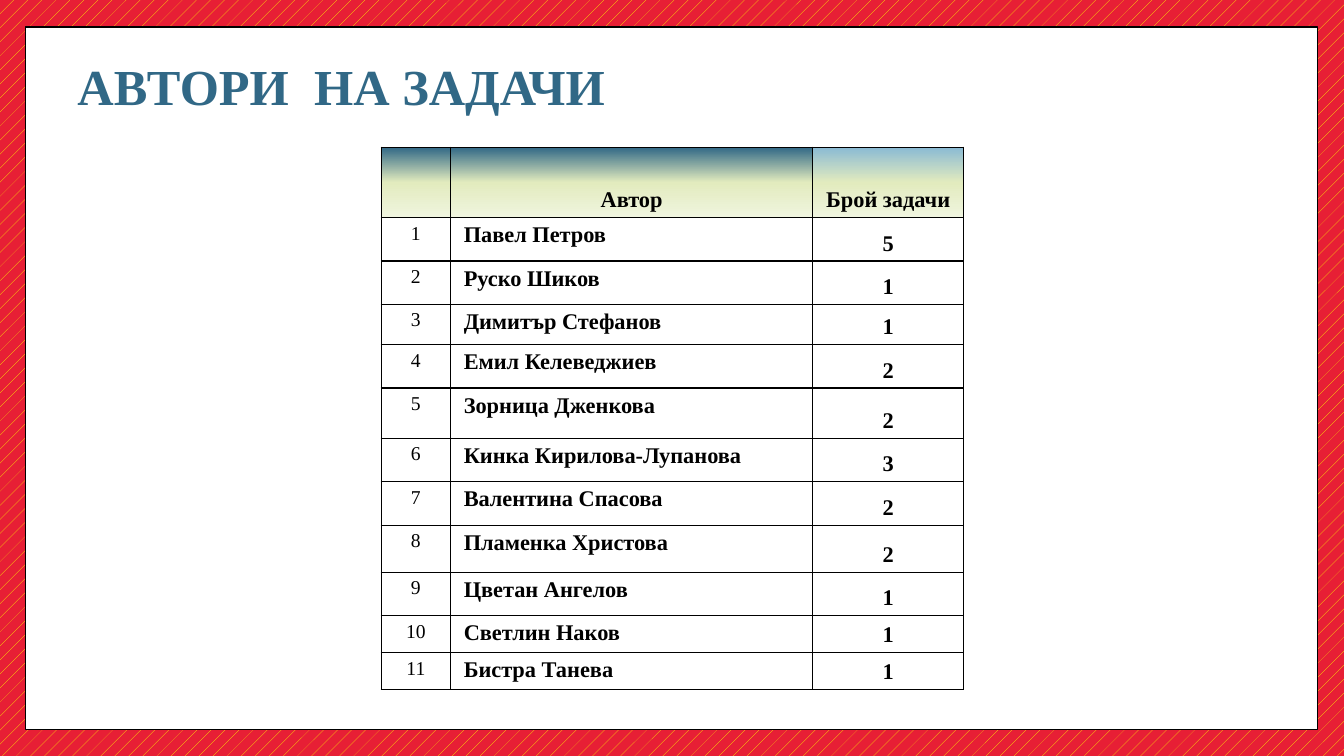
from lxml import etree
from pptx import Presentation
from pptx.dml.color import RGBColor
from pptx.enum.dml import MSO_PATTERN
from pptx.enum.shapes import MSO_SHAPE
from pptx.enum.text import MSO_ANCHOR, PP_ALIGN
from pptx.oxml.ns import qn
from pptx.util import Inches, Pt

RECTANGLE = MSO_SHAPE.RECTANGLE
DOTS = MSO_PATTERN.PERCENT_5
TOP, MIDDLE, BOTTOM = MSO_ANCHOR.TOP, MSO_ANCHOR.MIDDLE, MSO_ANCHOR.BOTTOM
LEFT, CENTER = PP_ALIGN.LEFT, PP_ALIGN.CENTER

COLORS = {
    "red": "E71F35",
    "yellow": "FFFF00",
    "white": "FFFFFF",
    "black": "000000",
    "blue": "316886",
    "light blue": "8ABAD4",
    "green": "E2EBBE",
    "pale green": "F0F5DF",
}

HEADERS = ("", "Автор", "Брой задачи")
HEADER_TINTS = ("blue", "blue", "light blue")
AUTHORS = (
    ("Павел Петров", 5),
    ("Руско Шиков", 1),
    ("Димитър Стефанов", 1),
    ("Емил Келеведжиев", 2),
    ("Зорница Дженкова", 2),
    ("Кинка Кирилова-Лупанова", 3),
    ("Валентина Спасова", 2),
    ("Пламенка Христова", 2),
    ("Цветан Ангелов", 1),
    ("Светлин Наков", 1),
    ("Бистра Танева", 1),
)
COLUMN_WIDTHS = (0.69, 3.59, 1.5)
ROW_HEIGHTS = (0.7, 0.43, 0.43, 0.4, 0.43, 0.5, 0.43, 0.43, 0.47, 0.43, 0.35, 0.35)

HEADER = {"size": 16, "bold": True, "align": CENTER, "anchor": BOTTOM}
NUMBER = {"size": 14, "bold": False, "align": CENTER, "anchor": TOP}
AUTHOR = {"size": 16, "bold": True, "align": LEFT, "anchor": TOP}
TASK_COUNT = {"size": 16, "bold": True, "align": CENTER, "anchor": BOTTOM}
CELL_MARGINS = {
    "margin_left": 0.13, "margin_top": 0.05,
    "margin_right": 0.13, "margin_bottom": 0.05,
}


def rgb(name):
    return RGBColor.from_string(COLORS[name])


def add_color(parent, name):
    etree.SubElement(parent, qn("a:srgbClr"), val=COLORS[name])


class SlideBuilder:
    """Holds the text style and the slide being built."""

    def __init__(self, slide, font_name):
        self.slide = slide
        self.font_name = font_name

    def background(self, front, back):
        fill = self.slide.background.fill
        fill.patterned()
        fill.pattern = DOTS
        fill.fore_color.rgb = rgb(front)
        fill.back_color.rgb = rgb(back)

    def panel(self, box):
        panel = self.slide.shapes.add_shape(RECTANGLE, *map(Inches, box))
        panel.shadow.inherit = False
        panel.fill.solid()
        panel.fill.fore_color.rgb = rgb("white")
        panel.line.color.rgb = rgb("black")
        panel.line.width = Pt(1)

    def styled_run(self, paragraph, text, size, bold, color):
        run = paragraph.add_run()
        run.text = text
        font_format = {"name": self.font_name, "size": Pt(size), "bold": bold}
        for attribute, value in font_format.items():
            setattr(run.font, attribute, value)
        run.font.color.rgb = rgb(color)

    def title(self, text, box):
        frame = self.slide.shapes.add_textbox(*map(Inches, box)).text_frame
        frame.word_wrap = True
        frame.vertical_anchor = MIDDLE
        paragraph = frame.paragraphs[0]
        paragraph.line_spacing = 0.9
        self.styled_run(paragraph, text, 36, True, "blue")

    def table(self, left, top, widths, heights):
        table = self.slide.shapes.add_table(
            len(heights), len(widths), Inches(left), Inches(top),
            Inches(sum(widths)), Inches(sum(heights))).table
        table.first_row = table.horz_banding = False
        for column, width in zip(table.columns, widths):
            column.width = Inches(width)
        for row, height in zip(table.rows, heights):
            row.height = Inches(height)
        return table

    def cell(self, cell, text, style, tint=None):
        """Fills one cell; a tint names the top colour of its gradient."""
        for attribute, value in CELL_MARGINS.items():
            setattr(cell, attribute, Inches(value))
        cell.vertical_anchor = style["anchor"]
        paragraph = cell.text_frame.paragraphs[0]
        paragraph.alignment = style["align"]
        if text:
            self.styled_run(paragraph, text, style["size"], style["bold"], "black")
        self.borders(cell)
        if tint:
            self.gradient(cell, tint)
        else:
            cell.fill.background()

    def borders(self, cell):
        properties = cell._tc.get_or_add_tcPr()
        for side in ("lnL", "lnR", "lnT", "lnB"):
            line = etree.SubElement(properties, qn(f"a:{side}"), w=str(Pt(1)))
            add_color(etree.SubElement(line, qn("a:solidFill")), "black")

    def gradient(self, cell, tint):
        fill = etree.SubElement(cell._tc.get_or_add_tcPr(), qn("a:gradFill"))
        stops = etree.SubElement(fill, qn("a:gsLst"))
        for percent, color in ((0, tint), (50, "green"), (100, "pale green")):
            stop = etree.SubElement(stops, qn("a:gs"), pos=str(percent * 1000))
            add_color(stop, color)
        etree.SubElement(fill, qn("a:lin"), ang=str(90 * 60000), scaled="0")


def main():
    deck = Presentation()
    deck.slide_width, deck.slide_height = Inches(13.33), Inches(7.5)
    slide = deck.slides.add_slide(deck.slide_layouts[6])
    builder = SlideBuilder(slide, "Times New Roman")

    builder.background("yellow", "red")
    builder.panel((0.25, 0.27, 12.82, 6.97))
    builder.title("АВТОРИ  НА ЗАДАЧИ", (0.67, 0.58, 12, 0.61))

    authors = builder.table(3.78, 1.46, COLUMN_WIDTHS, ROW_HEIGHTS)
    for column, (header, tint) in enumerate(zip(HEADERS, HEADER_TINTS)):
        builder.cell(authors.cell(0, column), header, HEADER, tint)
    for number, (author, task_count) in enumerate(AUTHORS, start=1):
        builder.cell(authors.cell(number, 0), str(number), NUMBER)
        builder.cell(authors.cell(number, 1), author, AUTHOR)
        builder.cell(authors.cell(number, 2), str(task_count), TASK_COUNT)

    deck.save("out.pptx")


if __name__ == "__main__":
    main()
